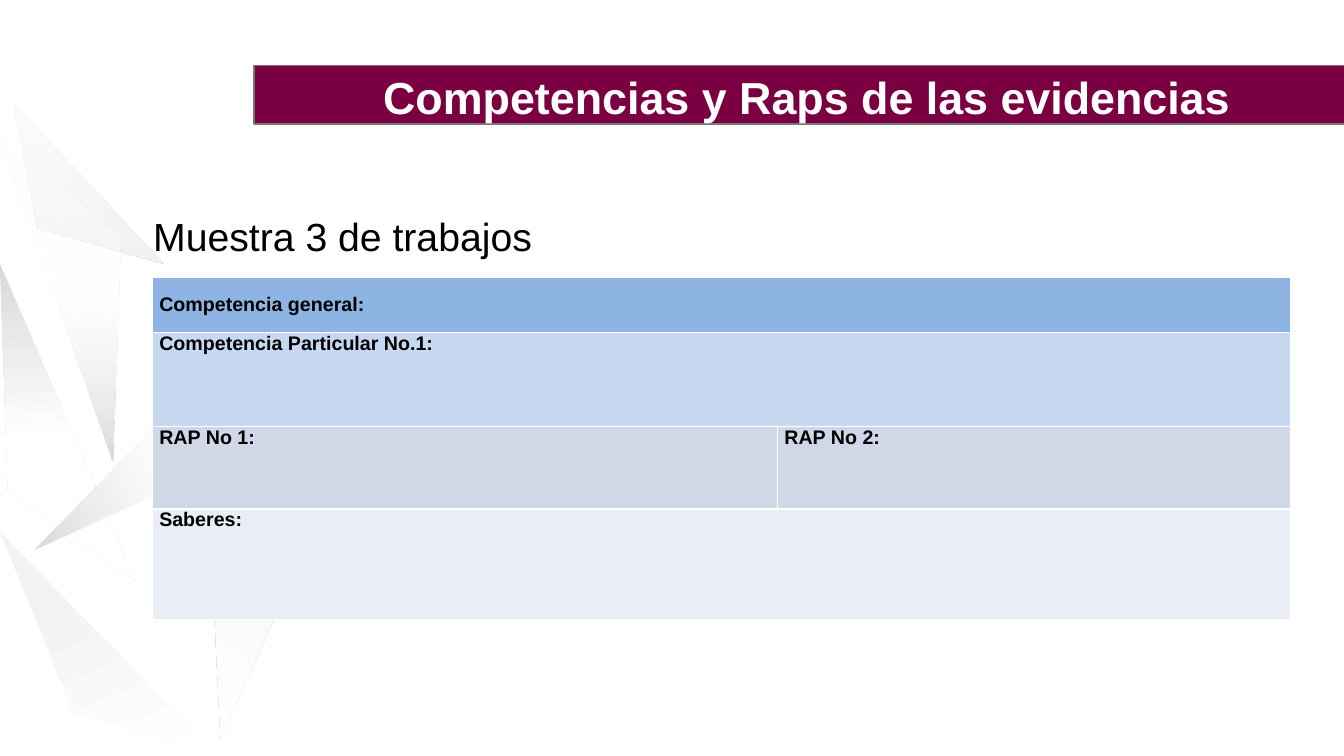
from dataclasses import dataclass

from lxml import etree
from pptx import Presentation
from pptx.dml.color import RGBColor
from pptx.enum import text
from pptx.oxml import ns
from pptx.util import Inches, Pt

TITLE = "Competencias y Raps de las evidencias"
SUBTITLE = "Muestra 3 de trabajos"


@dataclass(frozen=True)
class Theme:
    font: str = "Arial"
    banner: str = "7B0041"
    banner_line: str = "787878"
    light: str = "FFFFFF"
    dark: str = "000000"
    general: str = "8EB4E3"
    particular: str = "C6D9F1"
    rap: str = "D0D8E8"
    knowledge: str = "E9EDF4"
    title_size: int = 32
    subtitle_size: int = 28
    cell_size: int = 14


THEME = Theme()

# Each row: height, fill, anchor, texts. A lone text spans every column.
TOP, MIDDLE = text.MSO_ANCHOR.TOP, text.MSO_ANCHOR.MIDDLE
TABLES = [
    {"top": 2.75, "columns": [11.29], "rows": [
        (0.55, THEME.general, MIDDLE, ["Competencia general:"]),
        (0.97, THEME.particular, TOP, ["Competencia Particular No.1:"]),
    ]},
    {"top": 4.23, "columns": [6.2, 5.09], "rows": [
        (0.82, THEME.rap, TOP, ["RAP No 1:", "RAP No 2:"]),
        (1.1, THEME.knowledge, TOP, ["Saberes:"]),
    ]},
]
TABLE_LEFT = 1.51

# Each facet: corners, gradient angle, stops of (position %, colour, opacity %).
FACETS = [
    ([(0.37, 2.26), (0.13, 1.03), (1.62, 2.61)], 79.6,
     [(19, "F2F2F2", 32), (97, "F2F2F2", 100)]),
    ([(1.2, 2.34), (1.12, 4.58), (0, 1.35)], 270,
     [(0, "D9D9D9", 100), (55, "FFFFFF", 27)]),
    ([(2.74, 6.08), (2.19, 7.33), (2.08, 5.09)], 294,
     [(19, "FFFFFF", 51), (97, "F2F2F2", 100)]),
    ([(0.08, 4.86), (0, 2.62), (1.34, 5.76)], 86,
     [(0, "D9D9D9", 100), (55, "FFFFFF", 100)]),
    ([(0.73, 7.07), (0, 5.28), (2.14, 7.48)], 68.4,
     [(25, "F2F2F2", 100), (100, "FFFFFF", 100)]),
    ([(2.37, 4.52), (0.34, 5.45), (2.72, 3.01)], 333.5,
     [(0, "D9D9D9", 100), (55, "FFFFFF", 43)]),
]


def add_child(parent, tag, **attributes):
    child = etree.SubElement(parent, ns.qn(tag))
    for name, value in attributes.items():
        child.set(name, str(value))
    return child


def style_run(paragraph, size, colour, bold=False):
    font = paragraph.runs[0].font
    font.name, font.size, font.bold = THEME.font, Pt(size), bold
    font.color.rgb = RGBColor.from_string(colour)


def set_margins(target, left, top, right, bottom):
    target.margin_left, target.margin_right = Inches(left), Inches(right)
    target.margin_top, target.margin_bottom = Inches(top), Inches(bottom)


def add_facet(slide, corners, angle, stops):
    points = [(Inches(x), Inches(y)) for x, y in corners]
    builder = slide.shapes.build_freeform(*points[0])
    builder.add_line_segments(points[1:], close=True)
    facet = builder.convert_to_shape()
    facet.shadow.inherit = False
    facet.line.fill.background()
    gradient = etree.Element(ns.qn("a:gradFill"), rotWithShape="1")
    stop_list = add_child(gradient, "a:gsLst")
    for position, colour, opacity in stops:
        stop = add_child(stop_list, "a:gs", pos=position * 1000)
        rgb = add_child(stop, "a:srgbClr", val=colour)
        if opacity < 100:
            add_child(rgb, "a:alpha", val=opacity * 1000)
    add_child(gradient, "a:lin", ang=round(angle * 60000), scaled=0)
    facet.element.spPr.find(ns.qn("a:custGeom")).addnext(gradient)


def add_title(slide):
    title = slide.shapes.title
    title.left, title.top = Inches(2.52), Inches(0.65)
    title.width, title.height = Inches(10.82), Inches(0.58)
    title.fill.solid()
    title.fill.fore_color.rgb = RGBColor.from_string(THEME.banner)
    title.line.color.rgb = RGBColor.from_string(THEME.banner_line)
    title.line.width = Pt(0.96)
    frame = title.text_frame
    frame.text = TITLE
    frame.auto_size = text.MSO_AUTO_SIZE.NONE
    frame.vertical_anchor = TOP
    set_margins(frame, 1.28, 0.04, 0, 0)
    paragraph = frame.paragraphs[0]
    paragraph.alignment = text.PP_ALIGN.LEFT
    style_run(paragraph, THEME.title_size, THEME.light, bold=True)


def add_subtitle(slide):
    box = slide.shapes.add_textbox(
        Inches(1.51), Inches(2.1), Inches(6.08), Inches(0.48))
    frame = box.text_frame
    frame.word_wrap = True
    frame.text = SUBTITLE
    set_margins(frame, 0.01, 0.01, 0, 0)
    frame.paragraphs[0].alignment = text.PP_ALIGN.JUSTIFY
    style_run(frame.paragraphs[0], THEME.subtitle_size, THEME.dark)


def format_cell(cell, fill, anchor):
    set_margins(cell, 0.07, 0, 0.07, 0)
    cell.vertical_anchor = anchor
    properties = cell._tc.get_or_add_tcPr()
    for side in ("a:lnL", "a:lnR", "a:lnT", "a:lnB"):
        border = add_child(properties, side, w=Pt(1))
        solid = add_child(border, "a:solidFill")
        add_child(solid, "a:srgbClr", val=THEME.light)
    cell.fill.solid()
    cell.fill.fore_color.rgb = RGBColor.from_string(fill)


def add_competence_table(slide, top, columns, rows):
    table = slide.shapes.add_table(
        len(rows), len(columns), Inches(TABLE_LEFT), Inches(top),
        Inches(sum(columns)), Inches(sum(row[0] for row in rows))).table
    table.first_row = table.horz_banding = False
    for column, width in zip(table.columns, columns):
        column.width = Inches(width)
    for index, (height, fill, anchor, labels) in enumerate(rows):
        table.rows[index].height = Inches(height)
        for column in range(len(columns)):
            format_cell(table.cell(index, column), fill, anchor)
        if len(labels) < len(columns):
            table.cell(index, 0).merge(table.cell(index, len(columns) - 1))
        for column, label in enumerate(labels):
            cell = table.cell(index, column)
            cell.text = label
            style_run(cell.text_frame.paragraphs[0], THEME.cell_size,
                      THEME.dark, bold=True)


def main():
    presentation = Presentation()
    presentation.slide_width = Inches(13.33)
    presentation.slide_height = Inches(7.5)
    title_only = presentation.slide_layouts[5]
    slide = presentation.slides.add_slide(title_only)
    for facet in FACETS:
        add_facet(slide, *facet)
    add_title(slide)
    for table in TABLES:
        add_competence_table(slide, **table)
    add_subtitle(slide)
    presentation.save("out.pptx")


if __name__ == "__main__":
    main()
